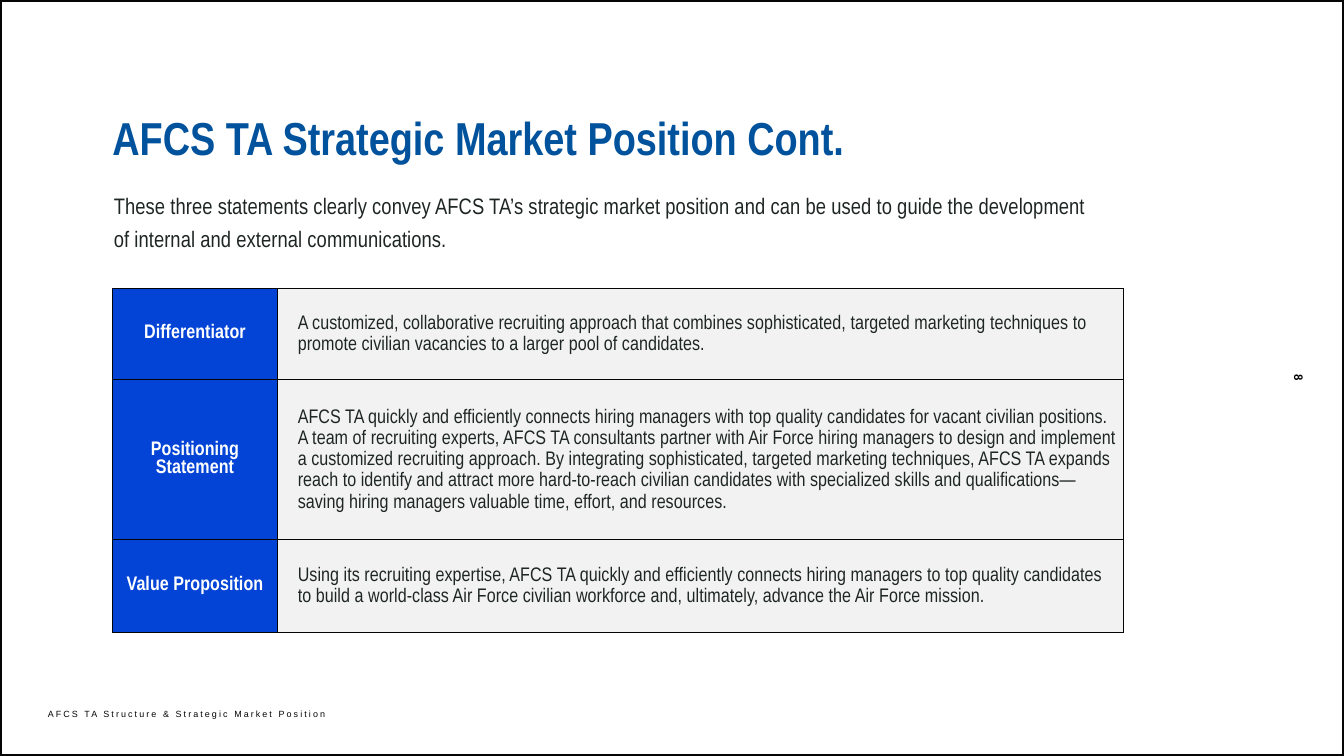
"""Build the AFCS TA strategic market position slide."""
from lxml import etree
from pptx import Presentation, util as u
from pptx.dml.color import RGBColor
from pptx.enum import shapes, text
from pptx.oxml.ns import qn

BLACK = RGBColor(0x05, 0x05, 0x05)
WHITE = RGBColor(0xFF, 0xFF, 0xFF)
NAVY = RGBColor(0x00, 0x52, 0x9C)
BLUE = RGBColor(0x03, 0x44, 0xD6)
GREY = RGBColor(0xF2, 0xF2, 0xF2)
INK = RGBColor(0x1E, 0x26, 0x23)
NARROW = "Arial Narrow"
WIDTH, HEIGHT = 2667, 1500

STATEMENTS = [
    (179, "Differentiator",
     "A customized, collaborative recruiting approach that combines sophisticated, "
     "targeted marketing techniques to promote civilian vacancies to a larger pool "
     "of candidates."),
    (319, "Positioning Statement",
     "AFCS TA quickly and efficiently connects hiring managers with top quality "
     "candidates for vacant civilian positions. A team of recruiting experts, AFCS TA "
     "consultants partner with Air Force hiring managers to design and implement a "
     "customized recruiting approach. By integrating sophisticated, targeted marketing "
     "techniques, AFCS TA expands reach to identify and attract more hard-to-reach "
     "civilian candidates with specialized skills and qualifications— saving hiring "
     "managers valuable time, effort, and resources."),
    (183, "Value Proposition",
     "Using its recruiting expertise, AFCS TA quickly and efficiently connects hiring "
     "managers to top quality candidates to build a world-class Air Force civilian "
     "workforce and, ultimately, advance the Air Force mission."),
]


def px(length):
    return u.Emu(length * 9144)


def assign(target, values):
    for name, value in values.items():
        setattr(target, name, value)


class Deck:
    """Hold the slide and its style, with a method for each kind of element."""

    def __init__(self):
        self.file = Presentation()
        assign(self.file, {"slide_width": px(WIDTH), "slide_height": px(HEIGHT)})
        self.slide = self.file.slides.add_slide(self.file.slide_layouts[5])

    def wording(self, frame, words, size, color, font=NARROW, bold=False, spacing=0,
                baseline=0, **layout):
        paragraph = frame.paragraphs[0]
        assign(paragraph, {"alignment": text.PP_ALIGN.LEFT, **layout})
        run = paragraph.add_run()
        run.text = words
        assign(run.font, {"size": u.Pt(size), "name": font, "bold": bold})
        run.font.color.rgb = color
        for name, value in {"spc": spacing, "baseline": baseline}.items():
            if value:
                run.font._element.set(name, str(value))
        return paragraph

    def margins(self, target, across, down):
        assign(target, {"margin_left": px(across), "margin_right": px(across),
                        "margin_top": px(down), "margin_bottom": px(down)})

    def place(self, shape, box):
        assign(shape, dict(zip(("left", "top", "width", "height"), map(px, box))))

    def border(self, box):
        outline = self.slide.shapes.add_shape(shapes.MSO_SHAPE.RECTANGLE, *map(px, box))
        outline.shadow.inherit = False
        outline.fill.background()
        outline.line.color.rgb = BLACK
        outline.line.width = u.Pt(4.5)

    def title(self, box, words, **style):
        heading = self.slide.shapes.title
        self.place(heading, box)
        frame = heading.text_frame
        self.margins(frame, 0, 0)
        assign(frame, {"word_wrap": True, "auto_size": text.MSO_AUTO_SIZE.NONE,
                       "vertical_anchor": text.MSO_ANCHOR.BOTTOM})
        self.wording(frame, words, **style)

    def label(self, box, words, inset=0, wrap=True, rotation=0, **style):
        holder = self.slide.shapes.add_textbox(*map(px, box))
        holder.rotation = rotation
        self.margins(holder.text_frame, inset, inset)
        holder.text_frame.word_wrap = wrap
        self.wording(holder.text_frame, words, **style)

    def cell(self, cell, fill, words, **style):
        self.margins(cell, 10, 5)
        cell.vertical_anchor = text.MSO_ANCHOR.MIDDLE
        cell.fill.solid()
        cell.fill.fore_color.rgb = fill
        properties = cell._tc.get_or_add_tcPr()
        for index, side in enumerate(("lnL", "lnR", "lnT", "lnB")):
            edge = etree.Element(qn(f"a:{side}"), w=str(u.Pt(1)))
            solid = etree.SubElement(edge, qn("a:solidFill"))
            etree.SubElement(solid, qn("a:srgbClr"), val=str(BLACK))
            properties.insert(index, edge)
        return self.wording(cell.text_frame, words, size=28, spacing=10, **style)

    def table(self, box, widths, rows):
        grid = self.slide.shapes.add_table(len(rows), len(widths), *map(px, box)).table
        assign(grid, {"first_row": False, "horz_banding": False})
        for column, width in zip(grid.columns, widths):
            column.width = px(width)
        for index, (height, name, statement) in enumerate(rows):
            grid.rows[index].height = px(height)
            self.cell(grid.cell(index, 0), BLUE, name, color=WHITE, bold=True,
                      alignment=text.PP_ALIGN.CENTER)
            body = self.cell(grid.cell(index, 1), GREY, statement, color=INK,
                             line_spacing=1.15)
            indent = body._p.get_or_add_pPr()
            indent.set("marL", str(px(30)))
            indent.set("indent", "0")


def main():
    deck = Deck()
    deck.border((0, 0, WIDTH, HEIGHT))
    deck.label((2589, 724, 15, 52), "8", wrap=False, rotation=90, size=18, color=BLACK,
               font="Calibri", bold=True, spacing=190, line_spacing=u.Pt(43))
    deck.title((223, 215, 1476, 111), "AFCS TA Strategic Market Position Cont.",
               size=66, color=NAVY, bold=True)
    deck.label((216, 357, 1984, 207),
               "These three statements clearly convey AFCS TA’s strategic market position "
               "and can be used to guide the development of internal and external "
               "communications.",
               inset=10, size=32, color=INK, spacing=10, line_spacing=u.Pt(48))
    deck.table((223, 573, 2007, 681), (328, 1679), STATEMENTS)
    deck.label((95, 1347, 586, 73), "AFCS TA Structure & Strategic Market Position",
               size=22, color=BLACK, font="Arial", spacing=300, baseline=23000,
               line_spacing=u.Pt(65))
    deck.file.save("out.pptx")


if __name__ == "__main__":
    main()
